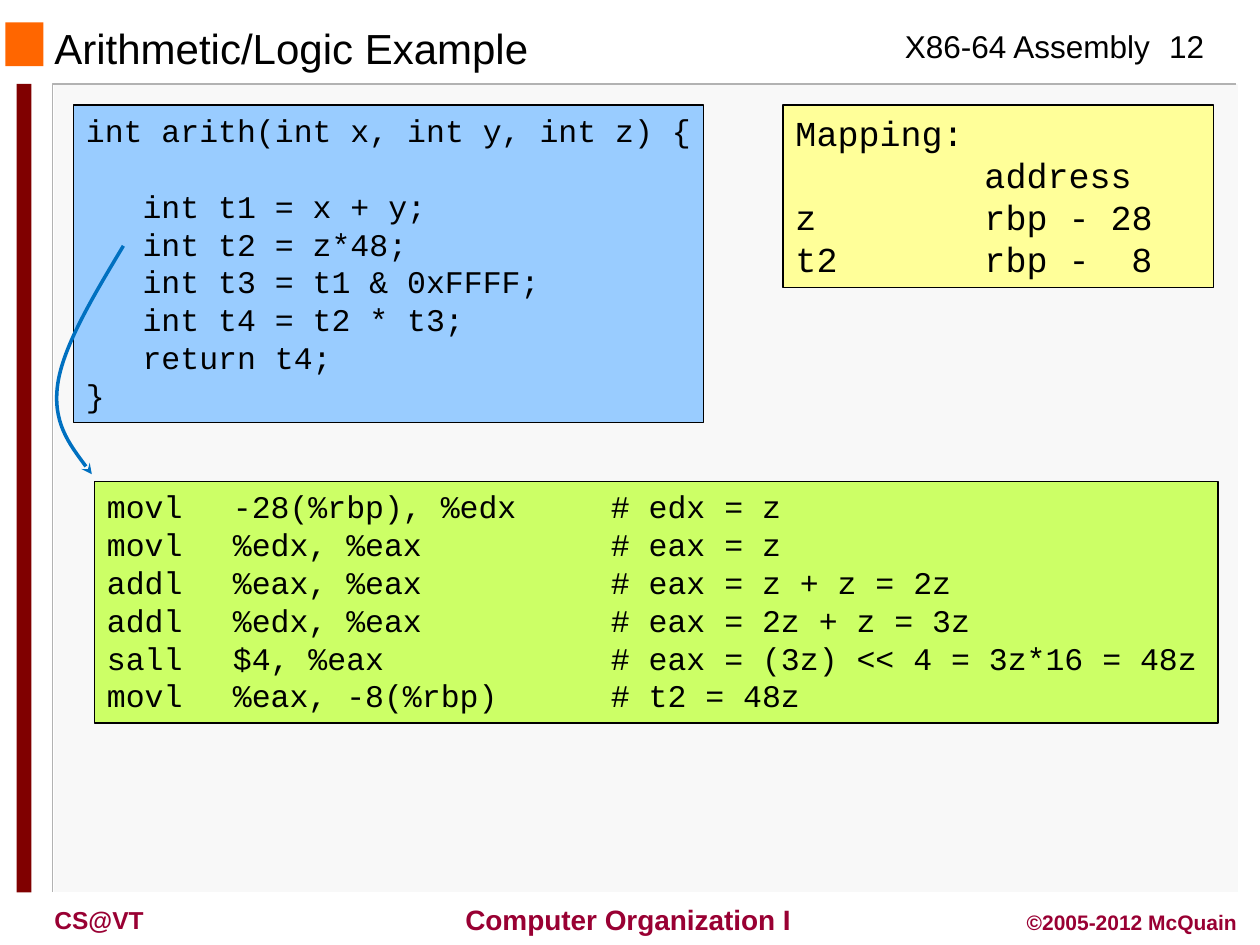
"""Build the arithmetic/logic example slide on X86-64 assembly."""
import pptx
import pptx.util
import pptx.dml.color
import pptx.enum.shapes
import pptx.enum.text
import pptx.oxml

Pt = pptx.util.Pt
RGBColor = pptx.dml.color.RGBColor
ALIGN = pptx.enum.text.PP_ALIGN
ANCHOR = pptx.enum.text.MSO_ANCHOR
RECTANGLE = pptx.enum.shapes.MSO_SHAPE.RECTANGLE
NAMESPACE = 'xmlns:a="http://schemas.openxmlformats.org/drawingml/2006/main"'

BLACK = RGBColor(0x00, 0x00, 0x00)
WHITE = RGBColor(0xFF, 0xFF, 0xFF)
CANVAS = RGBColor(0xF8, 0xF8, 0xF8)
GREY = RGBColor(0xB2, 0xB2, 0xB2)
ORANGE = RGBColor(0xFF, 0x66, 0x00)
MAROON = RGBColor(0x80, 0x00, 0x00)
CRIMSON = RGBColor(0x99, 0x00, 0x33)
SKY = RGBColor(0x99, 0xCC, 0xFF)
YELLOW = RGBColor(0xFF, 0xFF, 0x99)
LIME = RGBColor(0xCC, 0xFF, 0x66)
BLUE = RGBColor(0x00, 0x70, 0xC0)

BLOCKS = [
    ((31, 48.2, 676.8, 461.5), CANVAS),
    ((3, 12.8, 21.8, 25), ORANGE),
    ((9.5, 48, 8.5, 462), MAROON),
]
EDGES = [
    ([(706.5, 48), (30, 48), (30, 510)], GREY),
    ([(708, 48), (708, 510), (31.5, 510)], WHITE),
]
LABELS = [
    ("Arithmetic/Logic Example", (24, 14, 456, 27), 24, BLACK, ALIGN.LEFT, ANCHOR.MIDDLE),
    ("X86-64 Assembly", (510, 12, 156, 29), 18, BLACK, ALIGN.LEFT, ANCHOR.TOP),
    ("12", (654, 12, 48, 29), 18, BLACK, ALIGN.CENTER, ANCHOR.TOP),
    ("CS@VT", (24, 513.5, 108, 24), 14, CRIMSON, ALIGN.LEFT, ANCHOR.TOP),
    ("Computer Organization I", (254, 512, 210, 27), 16, CRIMSON, ALIGN.CENTER, ANCHOR.MIDDLE),
    ("©2005-2012 McQuain", (564, 516, 150, 22), 12, CRIMSON, ALIGN.RIGHT, ANCHOR.TOP),
]
SOURCE_CODE = [
    "int arith(int x, int y, int z) {",
    "int t1 = x + y;",
    "int t2 = z*48;",
    "int t3 = t1 & 0xFFFF;",
    "int t4 = t2 * t3;",
    "return t4;",
    "}",
]
MAPPING = ["Mapping:", "\taddress", "z\trbp - 28", "t2\trbp -\t8"]
ASSEMBLY = [
    ("movl", "-28(%rbp), %edx", "# edx = z"),
    ("movl", "%edx, %eax", "# eax = z"),
    ("addl", "%eax, %eax", "# eax = z + z = 2z"),
    ("addl", "%edx, %eax", "# eax = 2z + z = 3z"),
    ("sall", "$4, %eax", "# eax = (3z) << 4 = 3z*16 = 48z"),
    ("movl", "%eax, -8(%rbp)", "# t2 = 48z"),
]
ARROW_CURVE = [(70.5, 140.5), (53.3, 169.2), (36, 198), (33, 219.6),
               (30, 241.2), (41.2, 256.2), (52.5, 271)]
CHAR_RATIO = 0.6
LINE_RATIO = 1.2


def add_block(slide, box, fill):
    block = slide.shapes.add_shape(RECTANGLE, *map(Pt, box))
    block.shadow.inherit = False
    block.fill.solid()
    block.fill.fore_color.rgb = fill
    block.line.fill.background()
    return block


def add_outline(slide, points, color, width):
    start, *rest = [(Pt(x), Pt(y)) for x, y in points]
    builder = slide.shapes.build_freeform(*start)
    builder.add_line_segments(rest, close=False)
    outline = builder.convert_to_shape()
    outline.shadow.inherit = False
    outline.fill.background()
    outline.line.color.rgb = color
    outline.line.width = Pt(width)
    return outline


def add_curved_arrow(slide, points, color, width):
    arrow = add_outline(slide, points, color, width)
    segments = arrow._element.xpath(".//a:lnTo")
    for first in range(0, len(segments), 3):
        curve = pptx.oxml.parse_xml(f"<a:cubicBezTo {NAMESPACE}/>")
        segments[first].addprevious(curve)
        for segment in segments[first:first + 3]:
            curve.append(segment[0])
            segment.getparent().remove(segment)
    arrow.line._get_or_add_ln().append(
        pptx.oxml.parse_xml(f'<a:tailEnd {NAMESPACE} type="stealth"/>'))


def style(paragraph, font, size, color, bold=False):
    for run in paragraph.runs:
        run.font.name = font
        run.font.size = Pt(size)
        run.font.color.rgb = color
        run.font.bold = bold


def add_label(slide, text, box, size, color, align, anchor):
    frame = slide.shapes.add_textbox(*map(Pt, box)).text_frame
    frame.word_wrap = True
    frame.vertical_anchor = anchor
    frame.text = text
    frame.paragraphs[0].alignment = align
    style(frame.paragraphs[0], "Arial", size, color, color == CRIMSON)


def add_listing(slide, box, fill, lines, size, stops=()):
    panel = add_block(slide, box, fill)
    panel.line.color.rgb = BLACK
    panel.line.width = Pt(0.75)
    frame = panel.text_frame
    frame.word_wrap = True
    frame.vertical_anchor = ANCHOR.TOP
    frame.text = "\n".join(lines)
    for paragraph in frame.paragraphs:
        paragraph.alignment = ALIGN.LEFT
        paragraph.line_spacing = Pt(size * LINE_RATIO)
        style(paragraph, "Courier New", size, BLACK)
        if stops:
            tabs = "".join(f'<a:tab pos="{Pt(position)}" algn="{side}"/>'
                           for position, side in stops)
            paragraph._p.get_or_add_pPr().append(
                pptx.oxml.parse_xml(f"<a:tabLst {NAMESPACE}>{tabs}</a:tabLst>"))
    return frame.paragraphs


def main():
    deck = pptx.Presentation()
    deck.slide_width, deck.slide_height = Pt(720), Pt(540)
    slide = deck.slides.add_slide(deck.slide_layouts[6])
    for box, fill in BLOCKS:
        add_block(slide, box, fill)
    for points, color in EDGES:
        add_outline(slide, points, color, 1)
    for label in LABELS:
        add_label(slide, *label)

    code = add_listing(slide, (42, 60, 360, 181.5), SKY, SOURCE_CODE, 18)
    for statement in code[1:-1]:
        statement._p.get_or_add_pPr().set("marL", str(Pt(3 * 18 * CHAR_RATIO)))
    code[1].space_before = Pt(18 * LINE_RATIO)

    columns = [(9 * 20 * CHAR_RATIO, "l"), (17 * 20 * CHAR_RATIO, "r")]
    add_listing(slide, (447.5, 60, 246, 104.4), YELLOW, MAPPING, 20, columns)
    add_listing(slide, (54, 275, 642, 138.2), LIME, map("\t".join, ASSEMBLY), 18,
                [(72, "l"), (288, "l")])
    add_curved_arrow(slide, ARROW_CURVE, BLUE, 2)
    deck.save("out.pptx")


if __name__ == "__main__":
    main()
